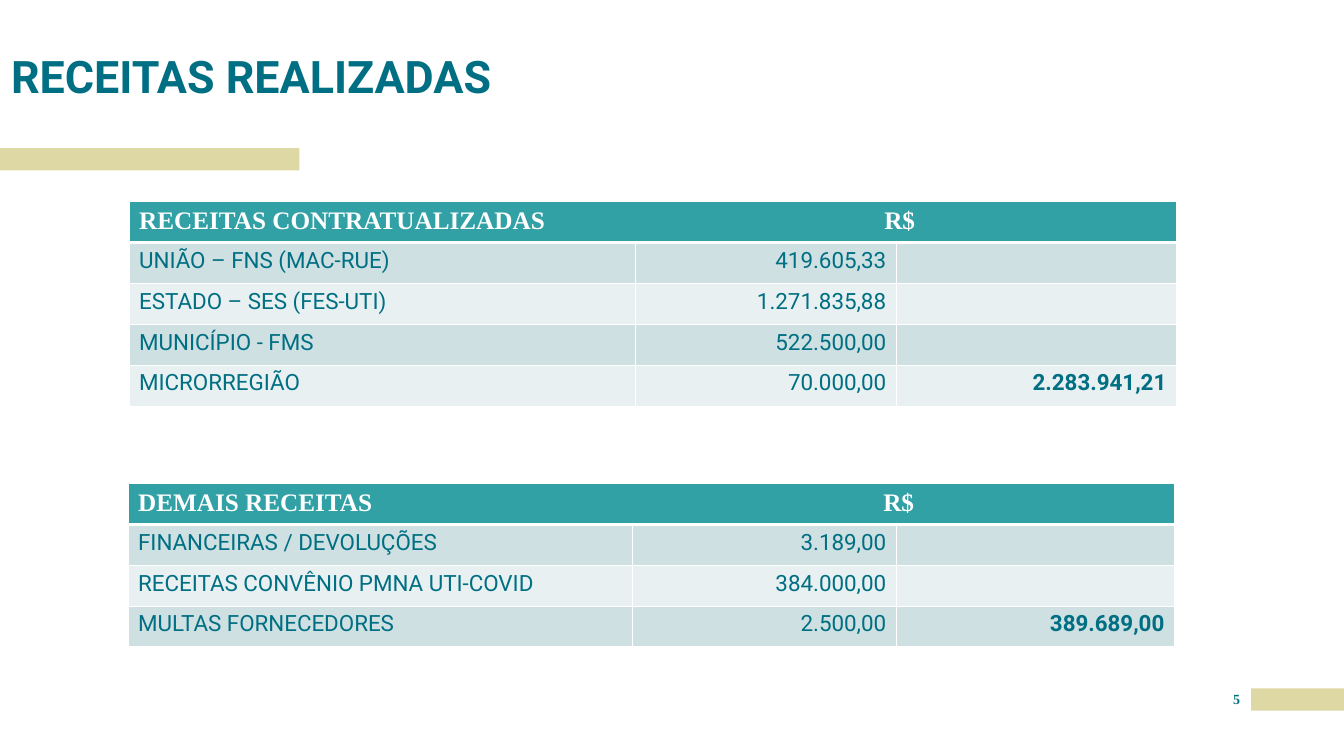
from lxml.etree import SubElement
from pptx import Presentation
from pptx.dml.color import RGBColor
from pptx.enum.shapes import MSO_SHAPE
from pptx.enum.text import MSO_ANCHOR, MSO_AUTO_SIZE, PP_ALIGN
from pptx.oxml.ns import qn
from pptx.util import Inches, Pt

COLORS = {"teal": "006F83", "header": "32A1A6", "sand": "DED8A4",
          "band_dark": "CEE0E1", "band_light": "E8F0F1", "white": "FFFFFF"}
HEADING = {"name": "Times New Roman", "size": Pt(18), "bold": True}
BODY = {"name": "Roboto", "size": Pt(16), "bold": False}
TOTAL = BODY | {"bold": True}
TITLE = {"name": "Roboto", "size": Pt(32), "bold": True}
NUMBER = {"name": "Times New Roman", "size": Pt(10), "bold": True}
CURRENCY_TAB = Inches(7.39)

CONTRACTED = ("RECEITAS CONTRATUALIZADAS", [
    ("UNIÃO – FNS (MAC-RUE)", "419.605,33", ""),
    ("ESTADO – SES (FES-UTI)", "1.271.835,88", ""),
    ("MUNICÍPIO - FMS", "522.500,00", ""),
    ("MICRORREGIÃO", "70.000,00", "2.283.941,21"),
])
OTHER = ("DEMAIS RECEITAS", [
    ("FINANCEIRAS / DEVOLUÇÕES", "3.189,00", ""),
    ("RECEITAS CONVÊNIO PMNA UTI-COVID", "384.000,00", ""),
    ("MULTAS FORNECEDORES", "2.500,00", "389.689,00"),
])


def rgb(name):
    return RGBColor.from_string(COLORS[name])


def write(tf, text, font, color, align=PP_ALIGN.LEFT):
    p = tf.paragraphs[0]
    p.alignment = align
    r = p.add_run()
    r.text = text
    for key, value in font.items():
        setattr(r.font, key, value)
    r.font.color.rgb = rgb(color)
    return p


def clear_insets(tf):
    tf.margin_left = tf.margin_top = tf.margin_right = tf.margin_bottom = 0
    tf.word_wrap = True
    tf.auto_size = MSO_AUTO_SIZE.NONE


def add_bar(s, *box):
    bar = s.shapes.add_shape(MSO_SHAPE.RECTANGLE, *map(Inches, box))
    bar.shadow.inherit = False
    bar.fill.solid()
    bar.fill.fore_color.rgb = rgb("sand")
    bar.line.fill.background()


def add_title(s, text, *box):
    sp = s.shapes.title
    sp.left, sp.top, sp.width, sp.height = map(Inches, box)
    tf = sp.text_frame
    clear_insets(tf)
    tf.vertical_anchor = MSO_ANCHOR.BOTTOM
    write(tf, text, TITLE, "teal").line_spacing = 0.9


def add_page_number(s, text, *box):
    tf = s.shapes.add_textbox(*map(Inches, box)).text_frame
    clear_insets(tf)
    write(tf, text, NUMBER, "teal", PP_ALIGN.CENTER)


def style_cell(cell, fill, top=1, bottom=1):
    """Draw white borders, widths in points, and fill the cell."""
    tc_pr = cell._tc.get_or_add_tcPr()
    for side, width in (("L", 1), ("R", 1), ("T", top), ("B", bottom)):
        ln = SubElement(tc_pr, qn(f"a:ln{side}"), w=str(Pt(width)))
        solid = SubElement(ln, qn("a:solidFill"))
        SubElement(solid, qn("a:srgbClr"), val=COLORS["white"])
    cell.fill.solid()
    cell.fill.fore_color.rgb = rgb(fill)


def add_revenue_table(s, content, widths, left, top, height):
    heading, items = content
    table = s.shapes.add_table(len(items) + 1, len(widths), Inches(left), Inches(top),
                               Inches(sum(widths)), Inches(height)).table
    for column, width in zip(table.columns, widths):
        column.width = Inches(width)
    for cell in table.rows[0].cells:
        style_cell(cell, "header", bottom=3)
    first = table.cell(0, 0)
    first.merge(table.cell(0, len(widths) - 1))
    p = write(first.text_frame, f"{heading}\tR$", HEADING, "white")
    tabs = SubElement(p._p.get_or_add_pPr(), qn("a:tabLst"))
    SubElement(tabs, qn("a:tab"), pos=str(CURRENCY_TAB), algn="l")

    for i, item in enumerate(items, 1):
        for j, text in enumerate(item):
            cell = table.cell(i, j)
            style_cell(cell, "band_dark" if i % 2 else "band_light", top=3 if i == 1 else 1)
            write(cell.text_frame, text, TOTAL if j == 2 else BODY, "teal",
                  PP_ALIGN.RIGHT if j else PP_ALIGN.LEFT)


def main():
    prs = Presentation()
    prs.slide_width, prs.slide_height = Inches(13.33), Inches(7.5)
    s = prs.slides.add_slide(prs.slide_layouts[5])
    add_bar(s, 12.41, 6.83, 0.92, 0.22)
    add_bar(s, 0, 1.47, 2.97, 0.22)
    add_title(s, "RECEITAS REALIZADAS", 0.11, 0, 9.34, 1.02)
    add_page_number(s, "5", 12.12, 6.85, 0.29, 0.25)
    add_revenue_table(s, CONTRACTED, (5.02, 2.59, 2.78), 1.28, 2, 2.03)
    add_revenue_table(s, OTHER, (5, 2.62, 2.76), 1.27, 4.8, 1.62)
    prs.save("out.pptx")


if __name__ == "__main__":
    main()
